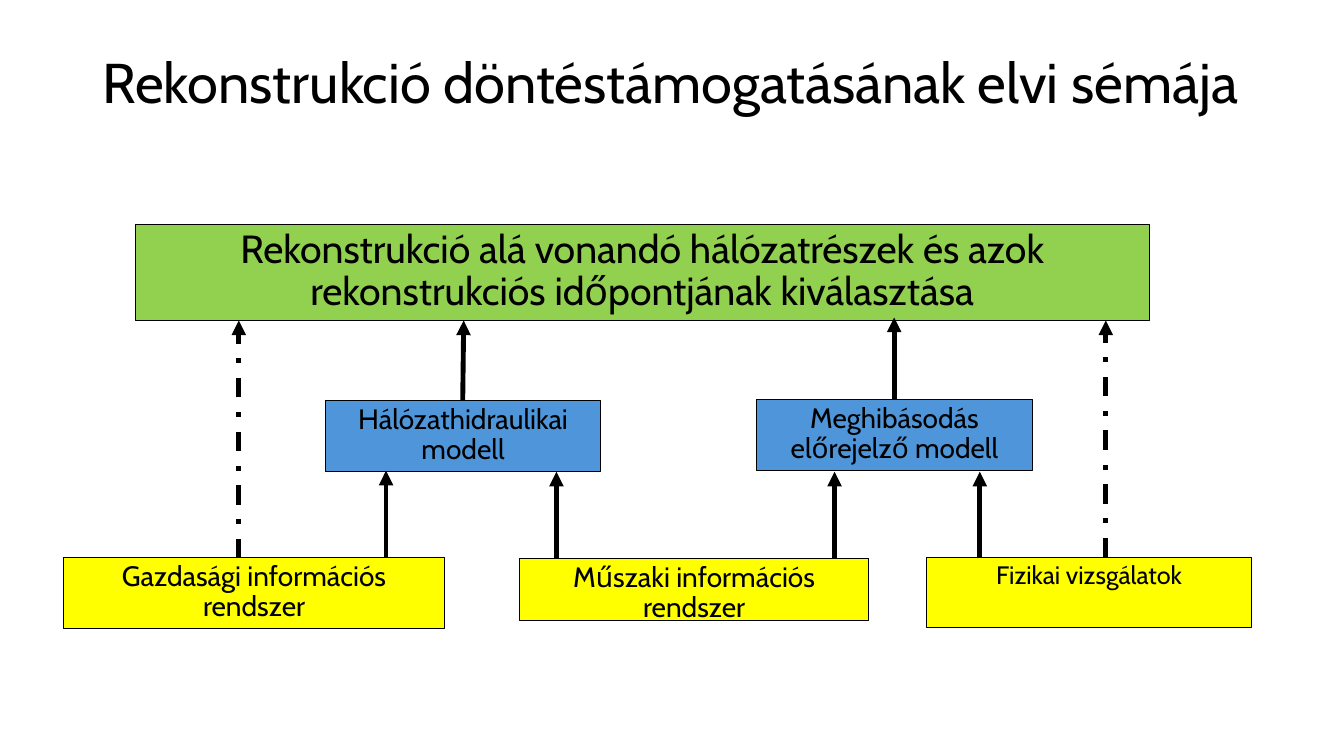
from dataclasses import dataclass

from lxml.etree import SubElement
from pptx import Presentation
from pptx.dml.color import RGBColor
from pptx.enum.dml import MSO_LINE
from pptx.enum.shapes import MSO_CONNECTOR, MSO_SHAPE
from pptx.enum.text import MSO_ANCHOR, PP_ALIGN
from pptx.oxml.ns import qn
from pptx.util import Inches, Pt

WIDTH, HEIGHT = Inches(13.33), Inches(7.5)
COLUMN, ROW = WIDTH / 100, HEIGHT / 100
BLACK, YELLOW, BLUE, GREEN = "000000", "FFFF00", "4E95D9", "92D050"
RESULT_TOP, RESULT_BOTTOM = 29.73, 42.4
MODEL_TOP, MODEL_BOTTOM = 52.8, 62.27
SOURCE_TOP = 73.73


@dataclass
class Box:
    """A labelled rectangle measured in grid columns and rows."""
    text: str
    left: float
    top: float
    width: float
    height: float
    fill: str
    size: int = 20


@dataclass
class Arrow:
    """An upward arrow measured in grid columns and rows."""
    column: float
    start: float
    end: float
    dash: MSO_LINE = MSO_LINE.SOLID
    lean: float = 0


BOXES = [
    Box("Gazdasági információs rendszer", 4.73, SOURCE_TOP, 28.35, 9.47, YELLOW),
    Box("Műszaki információs rendszer", 38.63, 73.87, 26.03, 8.27, YELLOW),
    Box("Fizikai vizsgálatok", 68.93, SOURCE_TOP, 24.22, 9.33, YELLOW, 18),
    Box("Meghibásodás előrejelző modell", 56.32, MODEL_TOP, 20.47, 9.47, BLUE),
    Box("Hálózathidraulikai modell", 24.22, 52.93, 20.47, 9.47, BLUE),
    Box("Rekonstrukció alá vonandó hálózatrészek és azok rekonstrukciós "
        "időpontjának kiválasztása", 10.05, RESULT_TOP, 75.45, 12.67, GREEN, 28),
]
ARROWS = [
    Arrow(28.72, SOURCE_TOP, MODEL_BOTTOM),
    Arrow(41.4, 73.87, 62.4),
    Arrow(62.1, 73.87, 62.4),
    Arrow(72.9, 73.87, 62.4),
    Arrow(17.77, 73.87, RESULT_BOTTOM, MSO_LINE.DASH_DOT),
    Arrow(34.43, 52.93, RESULT_BOTTOM, lean=0.07),
    Arrow(66.53, MODEL_TOP, 42),
    Arrow(82.28, SOURCE_TOP, RESULT_BOTTOM, MSO_LINE.DASH_DOT),
]


def color(value: str) -> RGBColor:
    """Turn a hex string into a colour."""
    return RGBColor.from_string(value)


def apply(target: object, values: dict) -> None:
    """Set each format value on the target."""
    for name, value in values.items():
        setattr(target, name, value)


def grid(left: float, top: float, width: float, height: float) -> tuple[int, ...]:
    """Convert grid measures to slide lengths."""
    return (round(left * COLUMN), round(top * ROW),
            round(width * COLUMN), round(height * ROW))


def write(shape, text: str, size: int, align: PP_ALIGN, anchor: MSO_ANCHOR) -> None:
    """Put one formatted paragraph in a shape."""
    frame = shape.text_frame
    apply(frame, {"word_wrap": True, "vertical_anchor": anchor})
    para = frame.paragraphs[0]
    apply(para, {"alignment": align, "line_spacing": 0.9})
    span = para.add_run()
    span.text = text
    apply(span.font, {"name": "Cabin", "size": Pt(size)})
    span.font.color.rgb = color(BLACK)


def draw_title(page, text: str) -> None:
    """Draw the heading of the slide."""
    shape = page.shapes.add_textbox(*grid(6.9, 5.33, 86.25, 11.87))
    write(shape, text, 40, PP_ALIGN.LEFT, MSO_ANCHOR.MIDDLE)


def draw_box(page, box: Box) -> None:
    """Draw a filled and outlined box with its label."""
    place = grid(box.left, box.top, box.width, box.height)
    shape = page.shapes.add_shape(MSO_SHAPE.RECTANGLE, *place)
    shape.shadow.inherit = False
    shape.fill.solid()
    shape.fill.fore_color.rgb = color(box.fill)
    shape.line.color.rgb = color(BLACK)
    shape.line.width = Pt(0.75)
    write(shape, box.text, box.size, PP_ALIGN.CENTER, MSO_ANCHOR.TOP)


def draw_arrow(page, arrow: Arrow) -> None:
    """Draw a thick line ending in a triangle."""
    ends = grid(arrow.column, arrow.start, arrow.column + arrow.lean, arrow.end)
    connector = page.shapes.add_connector(MSO_CONNECTOR.STRAIGHT, *ends)
    connector.line.color.rgb = color(BLACK)
    apply(connector.line, {"width": Pt(3.5), "dash_style": arrow.dash})
    SubElement(connector.line._get_or_add_ln(), qn("a:tailEnd"), type="triangle")
    SubElement(connector._element.spPr, qn("a:effectLst"))


def main() -> None:
    """Build and save the deck."""
    deck = Presentation()
    apply(deck, {"slide_width": WIDTH, "slide_height": HEIGHT})
    page = deck.slides.add_slide(deck.slide_layouts[6])
    draw_title(page, "Rekonstrukció döntéstámogatásának elvi sémája")
    for box in BOXES:
        draw_box(page, box)
    for arrow in ARROWS:
        draw_arrow(page, arrow)
    deck.save("out.pptx")


if __name__ == "__main__":
    main()
